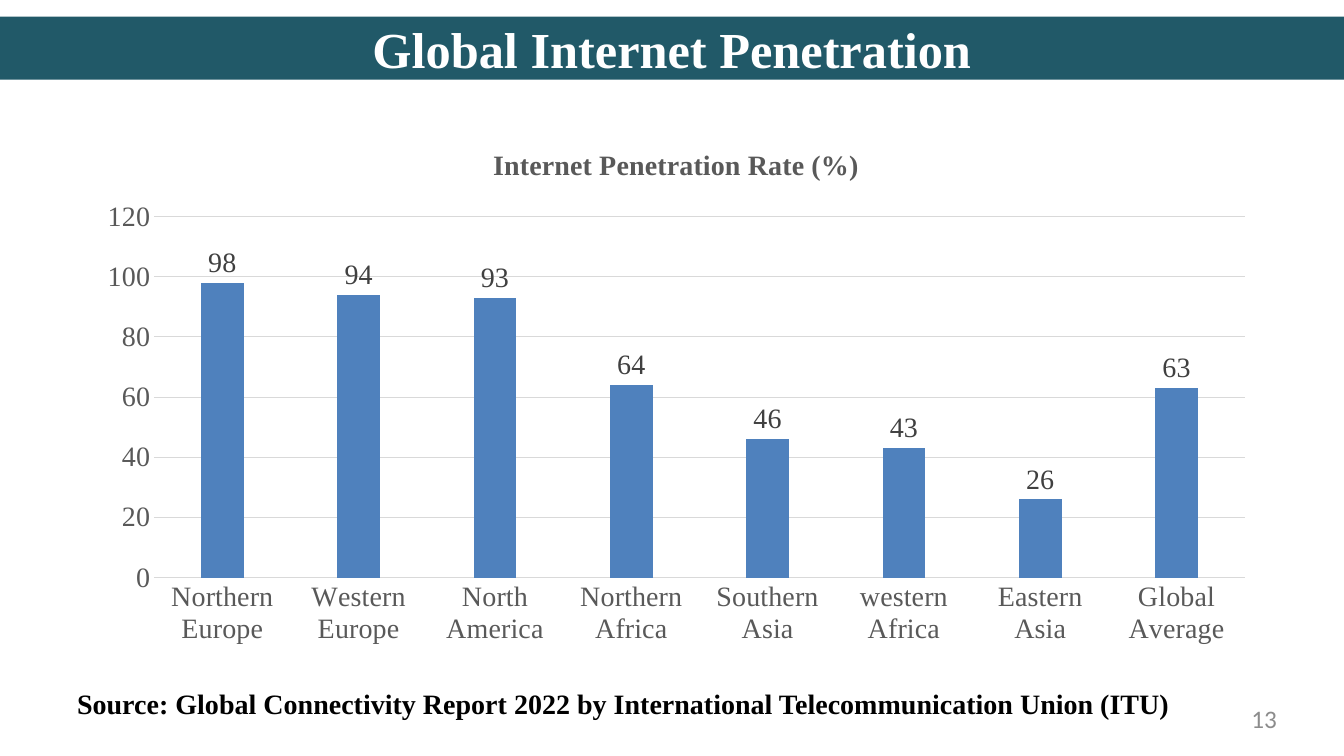
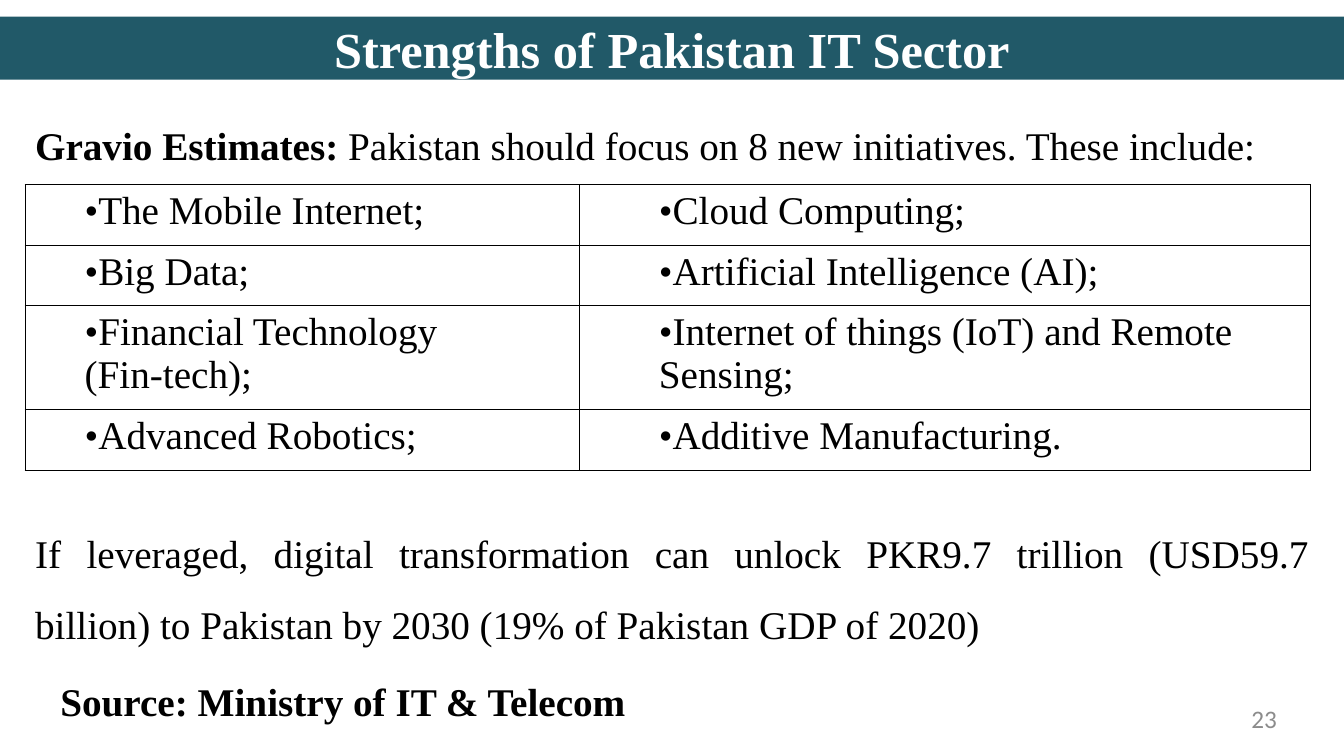
from dataclasses import dataclass

from lxml.etree import SubElement
from pptx import Presentation
from pptx.chart.data import CategoryChartData
from pptx.dml.color import RGBColor
from pptx.enum.chart import XL_CHART_TYPE as ChartType
from pptx.enum.chart import XL_LABEL_POSITION as LabelPosition
from pptx.enum.chart import XL_TICK_MARK as TickMark
from pptx.enum.shapes import MSO_SHAPE as ShapeType
from pptx.enum.text import MSO_ANCHOR as Anchor
from pptx.enum.text import PP_ALIGN as Align
from pptx.oxml.ns import qn
from pptx.util import Emu, Pt

PX = 9525


@dataclass(frozen=True)
class Theme:
    serif: str = "Times New Roman"
    sans: str = "Calibri"
    band: str = "215968"
    white: str = "FFFFFF"
    black: str = "000000"
    number: str = "8C8C8C"
    axis: str = "595959"
    label: str = "404040"
    grid: str = "D9D9D9"
    bar: str = "4F81BD"
    title_size: int = 36
    body_size: int = 28
    chart_size: int = 20
    number_size: int = 18


THEME = Theme()
SLIDE_SIZE = (1280, 720)
TITLE_BOX = (0, 16, 1280, 60)
NUMBER_BOX = (922, 670, 294, 36)

PENETRATION = {
    "Northern Europe": 98,
    "Western Europe": 94,
    "North America": 93,
    "Northern Africa": 64,
    "Southern Asia": 46,
    "western Africa": 43,
    "Eastern Asia": 26,
    "Global Average": 63,
}
INITIATIVES = [
    ("The Mobile Internet;", "Cloud Computing;"),
    ("Big Data;", "Artificial Intelligence (AI);"),
    ("Financial Technology\n(Fin-tech);", "Internet of things (IoT) and Remote\nSensing;"),
    ("Advanced Robotics;", "Additive Manufacturing."),
]
COLUMN_WIDTHS = (528, 696)
COLUMN_INDENTS = (47, 66)
ROW_HEIGHTS = (58, 57, 99, 58)


def px(*lengths):
    return [Emu(length * PX) for length in lengths]


def rgb(color):
    return RGBColor.from_string(color)


def set_font(font, size, color, bold=False, name=THEME.serif):
    font.name = name
    font.size = Pt(size)
    font.bold = bold
    font.color.rgb = rgb(color)


def clear_margins(frame):
    frame.margin_left = frame.margin_right = frame.margin_top = frame.margin_bottom = 0


def add_text(slide, box, text, size, color=THEME.black, bold=False,
             name=THEME.serif, align=Align.LEFT, spacing=None):
    frame = slide.shapes.add_textbox(*px(*box)).text_frame
    frame.word_wrap = True
    paragraph = frame.paragraphs[0]
    paragraph.text = text
    paragraph.alignment = align
    paragraph.line_spacing = spacing
    set_font(paragraph.font, size, color, bold, name)
    return frame


def add_title(slide, box, text):
    shape = slide.shapes.add_shape(ShapeType.RECTANGLE, *px(*box))
    shape.shadow.inherit = False
    shape.fill.solid()
    shape.fill.fore_color.rgb = rgb(THEME.band)
    shape.line.fill.background()
    frame = shape.text_frame
    clear_margins(frame)
    frame.vertical_anchor = Anchor.MIDDLE
    paragraph = frame.paragraphs[0]
    paragraph.text = text
    paragraph.alignment = Align.CENTER
    set_font(paragraph.font, THEME.title_size, THEME.white, True)


def add_framed_slide(presentation, title, number):
    slide = presentation.slides.add_slide(presentation.slide_layouts[6])
    add_title(slide, TITLE_BOX, title)
    frame = add_text(slide, NUMBER_BOX, str(number), THEME.number_size,
                     THEME.number, name=THEME.sans, align=Align.RIGHT)
    clear_margins(frame)
    return slide


def add_rate_chart(slide, box, title, rates):
    data = CategoryChartData()
    data.categories = list(rates)
    data.add_series(title, list(rates.values()))
    chart = slide.shapes.add_chart(ChartType.COLUMN_CLUSTERED, *px(*box), data).chart
    set_font(chart.font, THEME.chart_size, THEME.axis)
    chart.has_legend = False
    chart.has_title = True
    heading = chart.chart_title.text_frame.paragraphs[0]
    heading.text = title
    set_font(heading.font, THEME.chart_size, THEME.axis, True)

    for axis in (chart.category_axis, chart.value_axis):
        axis.major_tick_mark = axis.minor_tick_mark = TickMark.NONE
        set_font(axis.tick_labels.font, THEME.chart_size, THEME.axis)
    chart.value_axis.minimum_scale = 0
    chart.value_axis.maximum_scale = 120
    chart.value_axis.major_unit = 20
    chart.value_axis.format.line.fill.background()
    for line in (chart.category_axis.format.line,
                 chart.value_axis.major_gridlines.format.line):
        line.color.rgb = rgb(THEME.grid)
        line.width = Pt(0.75)

    plot = chart.plots[0]
    plot.gap_width = 219
    plot.overlap = -27
    plot.vary_by_categories = False
    fill = plot.series[0].format.fill
    fill.solid()
    fill.fore_color.rgb = rgb(THEME.bar)
    plot.has_data_labels = True
    labels = plot.data_labels
    labels.show_value = True
    labels.position = LabelPosition.OUTSIDE_END
    set_font(labels.font, THEME.chart_size, THEME.label)


def set_borders(cell):
    properties = cell._tc.get_or_add_tcPr()
    for position, side in enumerate(("a:lnL", "a:lnR", "a:lnT", "a:lnB")):
        line = properties.makeelement(qn(side), {"w": str(Pt(1))})
        fill = SubElement(line, qn("a:solidFill"))
        SubElement(fill, qn("a:srgbClr"), val=THEME.black)
        properties.insert(position, line)


def add_bullet(properties):
    font = properties.makeelement(qn("a:buFont"), {"typeface": THEME.serif})
    bullet = properties.makeelement(qn("a:buChar"), {"char": "•"})
    properties.insert(0, font)
    properties.insert(1, bullet)


def fill_cell(cell, text, indent):
    cell.fill.background()
    set_borders(cell)
    cell.text = text
    for position, paragraph in enumerate(cell.text_frame.paragraphs):
        set_font(paragraph.font, THEME.body_size, THEME.black)
        properties = paragraph._p.get_or_add_pPr()
        properties.set("marL", "0")
        properties.set("indent", str(indent * PX))
        if position == 0:
            add_bullet(properties)


def add_initiatives_table(slide, left, top):
    box = (left, top, sum(COLUMN_WIDTHS), sum(ROW_HEIGHTS))
    table = slide.shapes.add_table(len(INITIATIVES), len(COLUMN_WIDTHS), *px(*box)).table
    table.first_row = table.horz_banding = False
    for column, width in zip(table.columns, px(*COLUMN_WIDTHS)):
        column.width = width
    for row, height, texts in zip(table.rows, px(*ROW_HEIGHTS), INITIATIVES):
        row.height = height
        for cell, text, indent in zip(row.cells, texts, COLUMN_INDENTS):
            fill_cell(cell, text, indent)


def build_penetration_slide(presentation):
    slide = add_framed_slide(presentation, "Global Internet Penetration", 13)
    add_rate_chart(slide, (80, 120, 1128, 504), "Internet Penetration Rate (%)", PENETRATION)
    add_text(slide, (64, 649, 1104, 42),
             "Source: Global Connectivity Report 2022 by International "
             "Telecommunication Union (ITU)", THEME.chart_size, bold=True)


def build_strengths_slide(presentation):
    slide = add_framed_slide(presentation, "Strengths of Pakistan IT Sector", 23)
    intro = add_text(slide, (24, 88, 1232, 74), "", THEME.body_size,
                     align=Align.JUSTIFY, spacing=1.5).paragraphs[0]
    lead = intro.add_run()
    lead.text = "Gravio Estimates:"
    lead.font.bold = True
    intro.add_run().text = " Pakistan should focus on 8 new initiatives. These include:"
    add_initiatives_table(slide, 24, 176)
    add_text(slide, (24, 477, 1232, 144),
             "If leveraged, digital transformation can unlock PKR9.7 trillion "
             "(USD59.7 billion) to Pakistan by 2030 (19% of Pakistan GDP of 2020)",
             THEME.body_size, align=Align.JUSTIFY, spacing=1.5)
    add_text(slide, (48, 640, 608, 55), "Source: Ministry of IT & Telecom",
             THEME.body_size, bold=True)


def main():
    presentation = Presentation()
    presentation.slide_width, presentation.slide_height = px(*SLIDE_SIZE)
    build_penetration_slide(presentation)
    build_strengths_slide(presentation)
    presentation.save("out.pptx")


if __name__ == "__main__":
    main()
